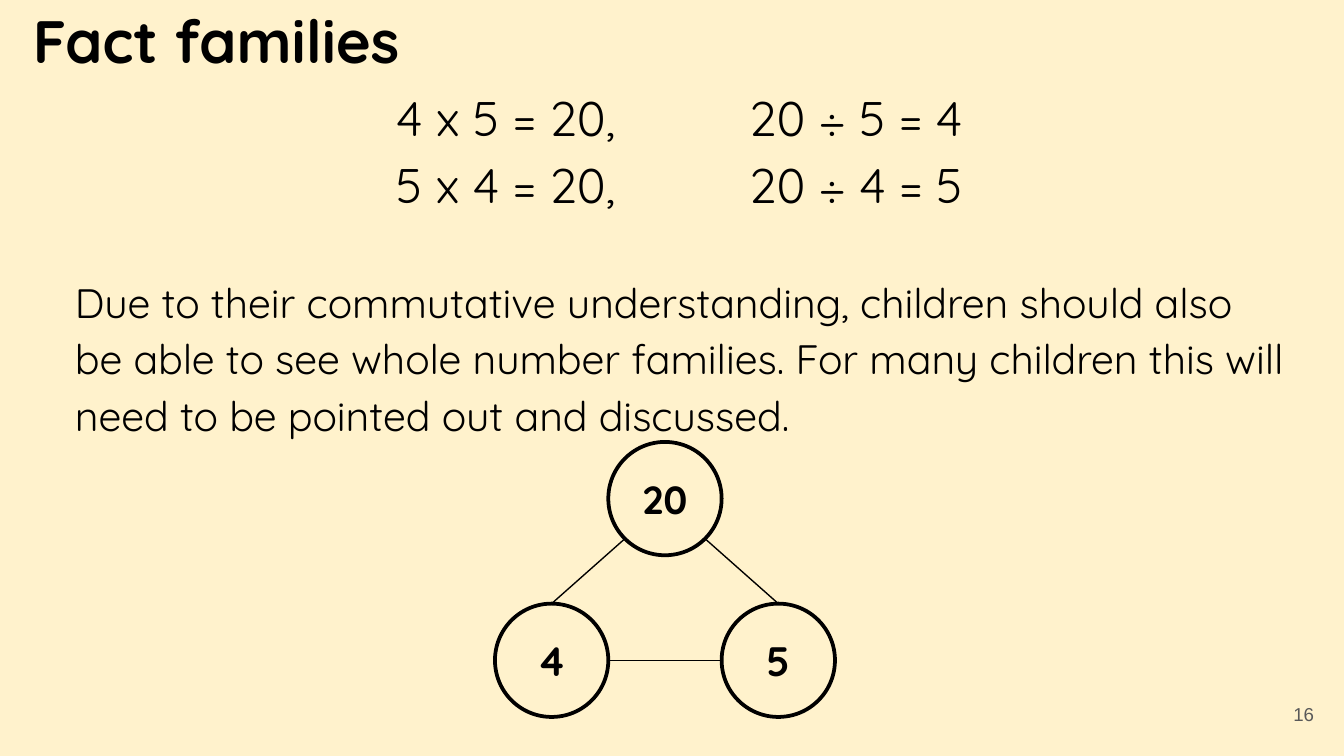
from math import cos, pi

from lxml.etree import SubElement
from pptx import Presentation
from pptx.dml.color import RGBColor
from pptx.enum.shapes import MSO_CONNECTOR, MSO_SHAPE
from pptx.enum.text import MSO_ANCHOR, PP_ALIGN
from pptx.oxml.ns import qn
from pptx.util import Emu, Pt

SLIDE_W, SLIDE_H = 1344, 756
INSET = 13
INK = "000000"


def px(length):
    return Emu(round(length * 914400 / 134.4))


def color(hex_value):
    return RGBColor.from_string(hex_value)


def write(shape, text, size, font="Quicksand", ink=INK, bold=False,
          align=PP_ALIGN.LEFT, anchor=MSO_ANCHOR.TOP, spacing=1.0, pad_y=INSET):
    frame = shape.text_frame
    frame.word_wrap = True
    frame.vertical_anchor = anchor
    frame.margin_left = frame.margin_right = px(INSET)
    frame.margin_top = frame.margin_bottom = px(pad_y)
    for index, line in enumerate(text.split("\n")):
        paragraph = frame.paragraphs[0] if index == 0 else frame.add_paragraph()
        paragraph.alignment = align
        paragraph.line_spacing = spacing
        run = paragraph.add_run()
        run.text = line
        run.font.name = font
        run.font.size = Pt(size)
        run.font.bold = bold
        run.font.color.rgb = color(ink)


def add_text(slide, box, text, size, **style):
    write(slide.shapes.add_textbox(*map(px, box)), text, size, **style)


def add_equations(slide, left, top, width, height):
    families = ["4 x 5 = 20,\n5 x 4 = 20,", "20 ÷ 5 = 4\n20 ÷ 4 = 5"]
    column_step = 353
    for column, equations in enumerate(families):
        box = (left + column * column_step, top, width - column_step, height)
        add_text(slide, box, equations, 26, spacing=1.15)


def add_number(group, left, top, diameter, number, size):
    circle = group.shapes.add_shape(
        MSO_SHAPE.OVAL, px(left), px(top), px(diameter), px(diameter))
    circle.shadow.inherit = False
    circle.fill.background()
    circle.line.color.rgb = color(INK)
    circle.line.width = Pt(2)
    write(circle, number, size, bold=True, align=PP_ALIGN.CENTER,
          anchor=MSO_ANCHOR.MIDDLE, pad_y=7)
    return circle


def add_link(group, start, end):
    link = group.shapes.add_connector(
        MSO_CONNECTOR.STRAIGHT, *map(px, (*start, *end)))
    link.line.color.rgb = color(INK)
    link.line.width = Pt(0.75)
    SubElement(link._element.spPr, qn("a:effectLst"))
    return link


def add_fact_triangle(slide, left, top, width, height):
    group = slide.shapes.add_group_shape()
    diameter = width / 3
    radius = diameter / 2
    middle = left + width / 2
    base = top + height - diameter
    add_number(group, middle - radius, top, diameter, "20", 21)
    factors = [add_number(group, x, base, diameter, number, 22)
               for x, number in ((left, "4"), (left + width - diameter, "5"))]
    rim = radius * cos(pi / 4)
    for side, factor in zip((-1, 1), factors):
        link = add_link(group, (middle + side * rim, top + radius + rim),
                        (middle + side * diameter, base))
        link.end_connect(factor, 0)
    add_link(group, (left + diameter, base + radius),
             (left + width - diameter, base + radius))


def main():
    presentation = Presentation()
    presentation.slide_width = px(SLIDE_W)
    presentation.slide_height = px(SLIDE_H)
    slide = presentation.slides.add_slide(presentation.slide_layouts[6])
    slide.background.fill.solid()
    slide.background.fill.fore_color.rgb = color("FFF2CC")

    add_text(slide, (20, -9, 1253, 85), "Fact families", 32, bold=True)
    add_equations(slide, 383, 66, 640, 160)
    add_text(slide, (62, 257, 1237, 196),
             "Due to their commutative understanding, children should also "
             "be able to see whole number families. For many children this "
             "will need to be pointed out and discussed.", 22, spacing=1.15)
    add_fact_triangle(slide, 495, 442, 340, 275)
    add_text(slide, (1246, 685, 81, 58), "16", 10, font="Arial", ink="595959",
             align=PP_ALIGN.RIGHT, anchor=MSO_ANCHOR.MIDDLE)
    presentation.save("out.pptx")


if __name__ == "__main__":
    main()
